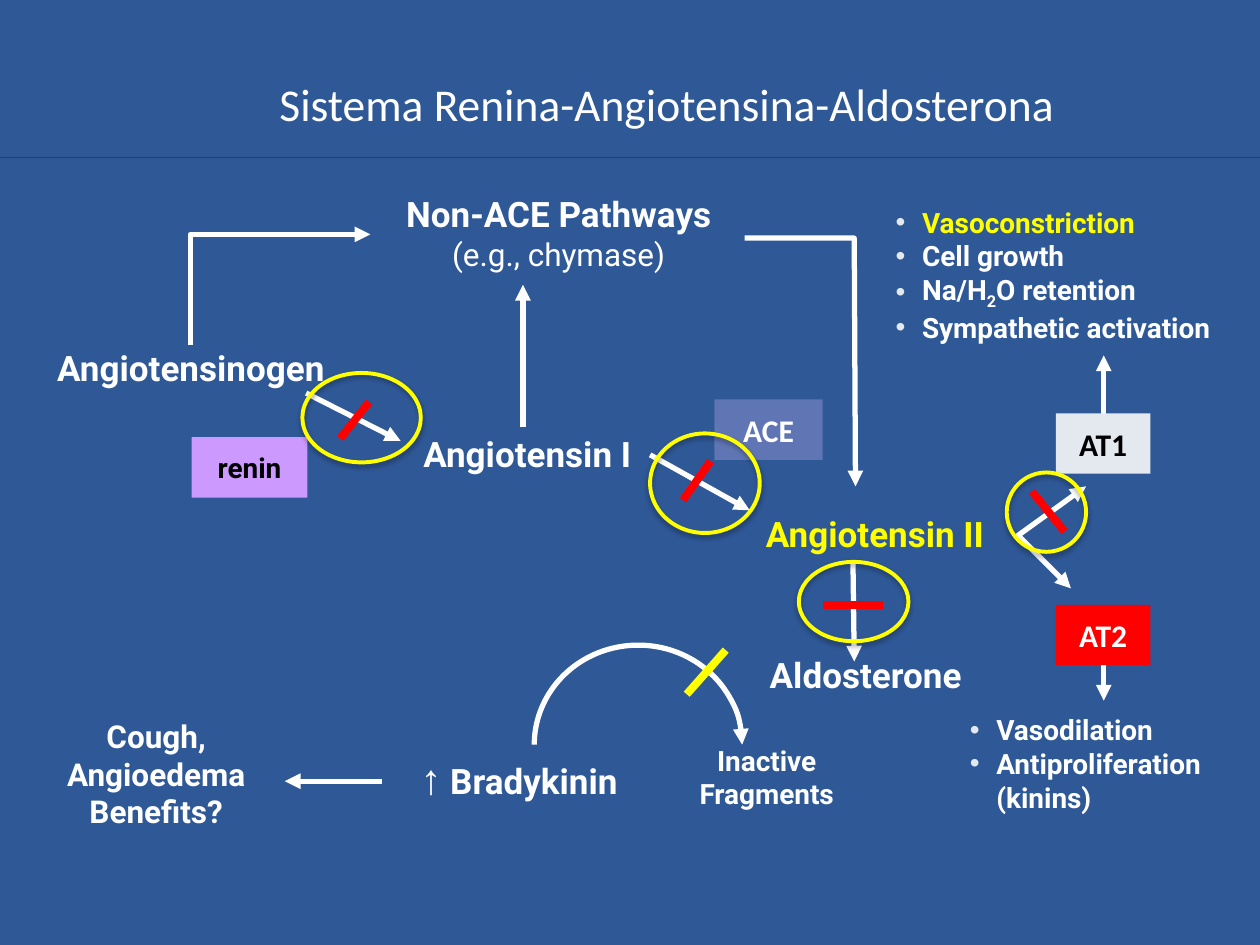
from dataclasses import dataclass

from lxml.etree import SubElement
from pptx import Presentation
from pptx.dml.color import RGBColor
from pptx.enum.shapes import MSO_CONNECTOR, MSO_SHAPE
from pptx.enum.text import MSO_ANCHOR, PP_ALIGN
from pptx.oxml.ns import qn
from pptx.util import Inches, Pt


@dataclass(frozen=True)
class Theme:
    background: str = "2F5897"
    white: str = "FFFFFF"
    black: str = "000000"
    yellow: str = "FFFF00"
    red: str = "FF0000"
    rule: str = "CC0000"
    pale: str = "E4E9EF"
    violet: str = "CC99FF"
    slate: str = "6076B4"
    body: str = "Roboto"
    label: str = "Calibri"
    symbol: str = "Arial"
    title_size: int = 26
    symbol_size: int = 24
    node_size: int = 20
    note_size: int = 18
    effect_size: int = 16
    hairline: float = 0.75
    ring_width: float = 2.25
    arrow_width: float = 3
    block_width: float = 4.5


THEME = Theme()
LEFT, CENTER = PP_ALIGN.LEFT, PP_ALIGN.CENTER


def rgb(color):
    return RGBColor.from_string(color)


def style_run(run, size, color, font=THEME.body, bold=True):
    run.font.size = Pt(size)
    run.font.name = font
    run.font.bold = bold
    run.font.color.rgb = rgb(color)


def style_line(shape, color, width, ends=()):
    shape.line.color.rgb = rgb(color)
    shape.line.width = Pt(width)
    for end in ends:
        SubElement(shape.line._get_or_add_ln(), qn(f"a:{end}"), type="triangle")


def add_bullet(paragraph):
    properties = paragraph._p.get_or_add_pPr()
    properties.set("marL", str(Inches(0.21)))
    properties.set("indent", str(-Inches(0.21)))
    bullet_color = SubElement(properties, qn("a:buClr"))
    SubElement(bullet_color, qn("a:srgbClr"), val=THEME.pale)
    SubElement(properties, qn("a:buFont"), typeface=THEME.symbol)
    SubElement(properties, qn("a:buChar"), char="•")


@dataclass
class Region:
    shapes: object
    left: float
    top: float

    def point(self, x, y):
        return Inches(self.left + x), Inches(self.top + y)

    def place(self, box):
        x, y, width, height = box
        return *self.point(x, y), Inches(width), Inches(height)

    def text(self, box, content, size=THEME.node_size, color=THEME.white,
             font=THEME.body, bold=True, align=CENTER, anchor=MSO_ANCHOR.TOP):
        frame = self.shapes.add_textbox(*self.place(box)).text_frame
        frame.word_wrap = True
        frame.vertical_anchor = anchor
        frame.text = content
        for paragraph in frame.paragraphs:
            paragraph.alignment = align
            for run in paragraph.runs:
                style_run(run, size, color, font, bold)
        return frame

    def effects(self, box, content):
        frame = self.text(box, content, THEME.effect_size, align=LEFT)
        for paragraph in frame.paragraphs:
            add_bullet(paragraph)
        return frame

    def tag(self, box, content, fill, color=THEME.white, font=THEME.label,
            size=THEME.note_size):
        shape = self.shapes.add_shape(MSO_SHAPE.RECTANGLE, *self.place(box))
        shape.shadow.inherit = False
        shape.fill.solid()
        shape.fill.fore_color.rgb = rgb(fill)
        shape.line.fill.background()
        frame = shape.text_frame
        frame.word_wrap = False
        frame.vertical_anchor = MSO_ANCHOR.MIDDLE
        frame.text = content
        frame.paragraphs[0].alignment = CENTER
        style_run(frame.paragraphs[0].runs[0], size, color, font)

    def line(self, start, end, color=THEME.white, width=THEME.arrow_width, ends=()):
        connector = self.shapes.add_connector(
            MSO_CONNECTOR.STRAIGHT, *self.point(*start), *self.point(*end))
        style_line(connector, color, width, ends)
        SubElement(connector._element.spPr, qn("a:effectLst"))

    def arrow(self, start, end):
        self.line(start, end, ends=("tailEnd",))

    def block(self, start, end, color=THEME.red):
        self.line(start, end, color, THEME.block_width)

    def route(self, points, ends=("tailEnd",)):
        start, *rest = [self.point(*point) for point in points]
        builder = self.shapes.build_freeform(*start)
        builder.add_line_segments(rest, close=False)
        shape = builder.convert_to_shape()
        shape.shadow.inherit = False
        shape.fill.background()
        style_line(shape, THEME.white, THEME.arrow_width, ends)

    def ring(self, box):
        shape = self.shapes.add_shape(MSO_SHAPE.OVAL, *self.place(box))
        shape.fill.background()
        style_line(shape, THEME.yellow, THEME.ring_width)
        effects = SubElement(shape._element.spPr, qn("a:effectLst"))
        shadow = SubElement(effects, qn("a:outerShdw"), blurRad=str(Pt(3.1)),
                            dist=str(Pt(1.8)), dir="5400000", rotWithShape="0")
        shade = SubElement(shadow, qn("a:srgbClr"), val=THEME.black)
        SubElement(shade, qn("a:alpha"), val="35000")


def add_header(region):
    region.text((1.17, 0.33, 8.25, 0.98), "Sistema Renina-Angiotensina-Aldosterona",
                THEME.title_size, font=THEME.label, bold=False, anchor=MSO_ANCHOR.MIDDLE)
    region.line((0, 1.25), (10, 1.25), THEME.rule, THEME.hairline)


def add_angiotensin_pathway(region):
    region.text((0, 1.22, 2.55, 0.43), "Angiotensinogen")
    pathways = region.text((2.76, 0, 2.87, 0.73), "Non-ACE Pathways\v(e.g., chymase)")
    style_run(pathways.paragraphs[0].runs[1], THEME.note_size, THEME.white, bold=False)
    region.text((2.91, 1.9, 2.07, 0.43), "Angiotensin I")
    region.text((5.59, 2.54, 2.23, 0.44), "Angiotensin II", color=THEME.yellow)
    region.text((5.77, 3.66, 1.88, 0.43), "Aldosterone", align=LEFT)
    region.tag((1.28, 1.99, 0.92, 0.48), "renin", THEME.violet, THEME.black,
               THEME.body, THEME.effect_size)
    region.tag((5.43, 1.69, 0.86, 0.48), "ACE", THEME.slate)

    region.route([(1.27, 1.26), (1.27, 0.38), (2.7, 0.38)])
    region.route([(5.67, 0.41), (6.54, 0.41), (6.55, 2.38)])
    region.arrow((3.91, 1.91), (3.91, 0.78))
    for arrow, block, ring in (
        [((2.19, 1.64), (2.94, 2.02)), ((2.69, 1.71), (2.46, 2)), (2.16, 1.48, 0.94, 0.71)],
        [((4.92, 2.13), (5.71, 2.57)), ((5.18, 2.49), (5.4, 2.18)), (4.92, 1.96, 0.87, 0.79)],
        [((6.53, 2.99), (6.54, 3.77)), ((6.29, 3.32), (6.77, 3.32)), (6.1, 2.98, 0.87, 0.63)],
    ):
        region.arrow(*arrow)
        region.block(*block)
        region.ring(ring)


def add_receptors(region):
    constriction = region.effects(
        (0, 0, 2.99, 1.17),
        "Vasoconstriction\nCell growth\nNa/H\nSympathetic activation")
    constriction.paragraphs[0].runs[0].font.color.rgb = rgb(THEME.yellow)
    retention = constriction.paragraphs[2]
    for part in ("2", "O retention"):
        run = retention.add_run()
        run.text = part
        style_run(run, THEME.effect_size, THEME.white)
    retention.runs[1].font._element.set("baseline", "-25000")
    region.effects((0.59, 4.03, 2.26, 0.9), "Vasodilation\nAntiproliferation\v(kinins)")

    region.arrow((1.75, 1.79), (1.75, 1.24))
    region.arrow((1.75, 3.64), (1.75, 3.98))
    region.route([(1.61, 2.28), (1.07, 2.67), (1.49, 3.09)], ("headEnd", "tailEnd"))
    region.block((1.18, 2.32), (1.44, 2.64))
    region.tag((1.37, 1.7, 0.75, 0.48), "AT1", THEME.pale, THEME.black)
    region.tag((1.37, 3.22, 0.75, 0.48), "AT2", THEME.red)
    region.ring((0.98, 2.17, 0.63, 0.63))


def add_bradykinin_pathway(region):
    region.text((0, 0.52, 1.76, 1), "Cough,\vAngioedema\nBenefits?", THEME.note_size)
    bradykinin = region.text((2.77, 0.8, 1.98, 0.5), "↑").paragraphs[0]
    style_run(bradykinin.runs[0], THEME.symbol_size, THEME.white, THEME.symbol)
    name = bradykinin.add_run()
    name.text = " Bradykinin"
    style_run(name, THEME.node_size, THEME.white)
    region.text((5.03, 0.73, 1.39, 0.64), "Inactive\vFragments", THEME.effect_size)

    breakdown = region.shapes.add_shape(MSO_SHAPE.ARC, *region.place((3.88, 0, 1.65, 1.58)))
    breakdown.adjustments[0] = 108
    breakdown.adjustments[1] = 0
    breakdown.shadow.inherit = False
    breakdown.fill.background()
    style_line(breakdown, THEME.white, THEME.arrow_width, ("tailEnd",))
    region.block((5.4, 0.04), (5.09, 0.39), THEME.yellow)
    region.arrow((2.67, 1.08), (1.9, 1.08))


def main():
    presentation = Presentation()
    presentation.slide_width, presentation.slide_height = Inches(10), Inches(7.5)
    slide = presentation.slides.add_slide(presentation.slide_layouts[6])
    slide.background.fill.solid()
    slide.background.fill.fore_color.rgb = rgb(THEME.background)
    add_header(Region(slide.shapes, 0, 0))
    add_angiotensin_pathway(Region(slide.shapes, 0.24, 1.48))
    add_receptors(Region(slide.shapes, 7.01, 1.58))
    add_bradykinin_pathway(Region(slide.shapes, 0.36, 5.12))
    presentation.save("out.pptx")


if __name__ == "__main__":
    main()
